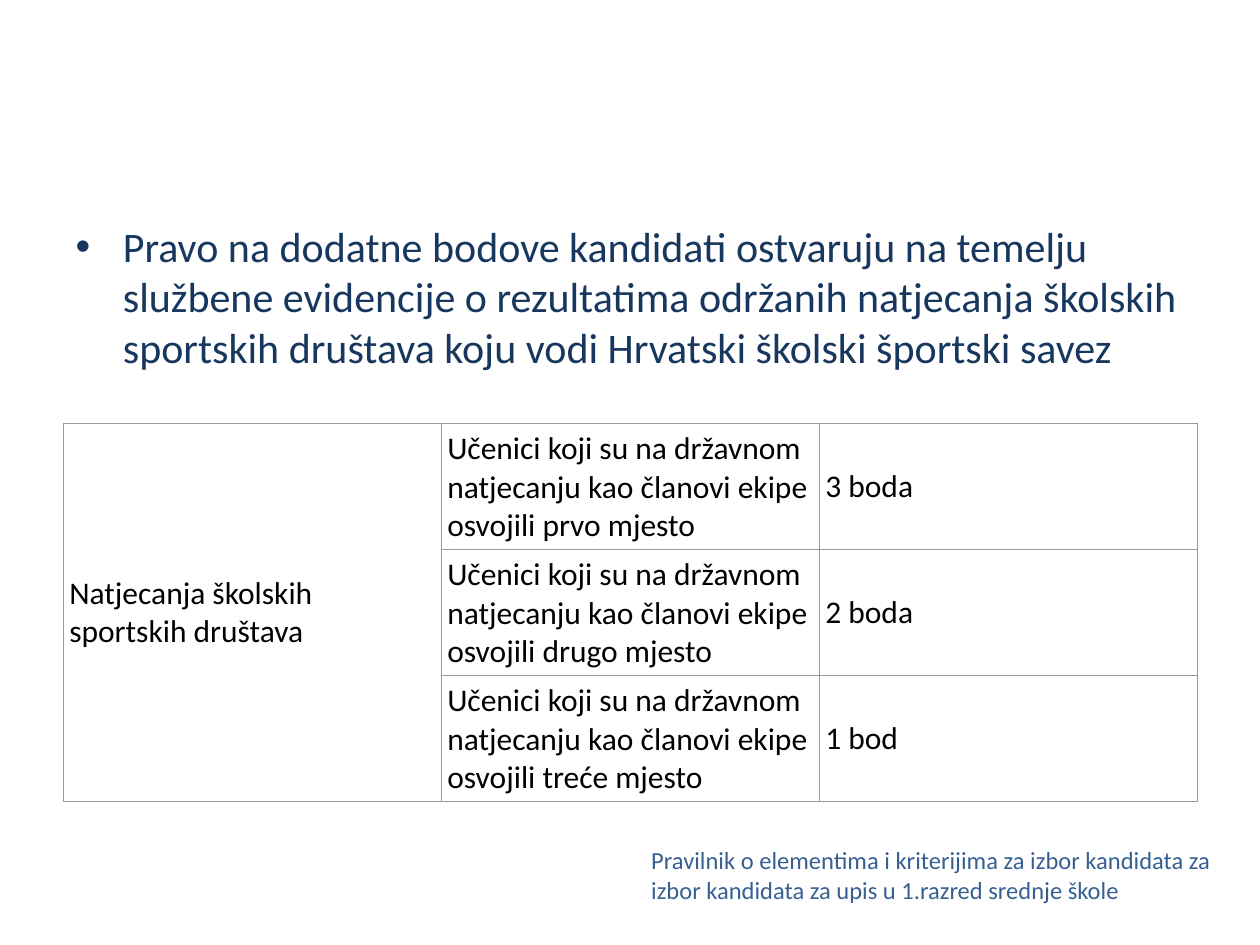
"""Build the slide on extra points for school sports competitions."""
from lxml import etree
from pptx import Presentation
from pptx import util as u
from pptx.dml import color
from pptx.enum import text
from pptx.oxml import ns

BODY = ("Pravo na dodatne bodove kandidati ostvaruju na temelju službene evidencije o "
        "rezultatima održanih natjecanja školskih sportskih društava koju vodi "
        "Hrvatski školski športski savez")
SOURCE = ("Pravilnik o elementima i kriterijima za izbor kandidata za "
          "izbor kandidata za upis u 1.razred srednje škole")
CATEGORY = "Natjecanja školskih sportskih društava"
RESULT = "Učenici koji su na državnom natjecanju kao članovi ekipe osvojili {} mjesto"
POINTS = [("prvo", "3 boda"), ("drugo", "2 boda"), ("treće", "1 bod")]


def rgb(value):
    """Return the colour for a hex string."""
    return color.RGBColor.from_string(value)


def set_attrs(obj, values):
    """Set each attribute in values on obj."""
    for name, value in values.items():
        setattr(obj, name, value)


def place(sp, left, top, width, height):
    """Position a shape in inches."""
    box = {"left": left, "top": top, "width": width, "height": height}
    set_attrs(sp, {name: u.Inches(value) for name, value in box.items()})


def write(tf, content, size, hex_color):
    """Write one formatted paragraph into a text frame."""
    p = tf.paragraphs[0]
    p.space_before = u.Pt(0)
    r = p.add_run()
    r.text = content
    set_attrs(r.font, {"name": "Calibri", "size": u.Pt(size), "bold": False})
    r.font.color.rgb = rgb(hex_color)


def add_body(s, content):
    """Fill the body placeholder and remove the unused title."""
    title = s.shapes.title
    title.element.getparent().remove(title.element)
    sp = s.placeholders[1]
    place(sp, 0.5, 1.7, 9, 5)
    sp.text_frame.auto_size = text.MSO_AUTO_SIZE.NONE
    write(sp.text_frame, content, 24, "17375E")


def add_source(s, content):
    """Add the source note at the bottom right."""
    sp = s.shapes.add_textbox(0, 0, 0, 0)
    place(sp, 5.07, 6.66, 4.93, 0.57)
    set_attrs(sp.text_frame, {"word_wrap": True,
                              "auto_size": text.MSO_AUTO_SIZE.SHAPE_TO_FIT_TEXT})
    write(sp.text_frame, content, 14, "376092")


def add_borders(cell, hex_color, width):
    """Draw a thin line on all four sides of a cell."""
    tc_pr = cell._tc.get_or_add_tcPr()
    for side in ("lnL", "lnR", "lnT", "lnB"):
        ln = etree.SubElement(tc_pr, ns.qn(f"a:{side}"), w=str(u.Pt(width)))
        fill = etree.SubElement(ln, ns.qn("a:solidFill"))
        etree.SubElement(fill, ns.qn("a:srgbClr"), val=hex_color)


def format_cell(cell):
    """Set the margins, anchor, borders and fill of a cell."""
    margins = {f"margin_{side}": u.Inches(0.05)
               for side in ("left", "right", "top", "bottom")}
    set_attrs(cell, {**margins, "vertical_anchor": text.MSO_ANCHOR.MIDDLE})
    add_borders(cell, "999999", 0.6)
    cell.fill.background()


def add_points_table(s):
    """Add the table of results and points with a merged category cell."""
    table = s.shapes.add_table(len(POINTS), 3, u.Inches(0.5), u.Inches(3.36),
                               u.Inches(9), u.Inches(3)).table
    set_attrs(table, {"first_row": False, "horz_banding": False})
    for cell in table.iter_cells():
        format_cell(cell)
    table.cell(0, 0).merge(table.cell(len(POINTS) - 1, 0))
    write(table.cell(0, 0).text_frame, CATEGORY, 18, "000000")
    for row, (rank, points) in enumerate(POINTS):
        for col, content in enumerate((RESULT.format(rank), points), 1):
            write(table.cell(row, col).text_frame, content, 18, "000000")


def main():
    """Build and save the presentation."""
    prs = Presentation()
    set_attrs(prs, {"slide_width": u.Inches(10), "slide_height": u.Inches(7.5)})
    s = prs.slides.add_slide(prs.slide_layouts[1])
    add_body(s, BODY)
    add_source(s, SOURCE)
    add_points_table(s)
    prs.save("out.pptx")


if __name__ == "__main__":
    main()
